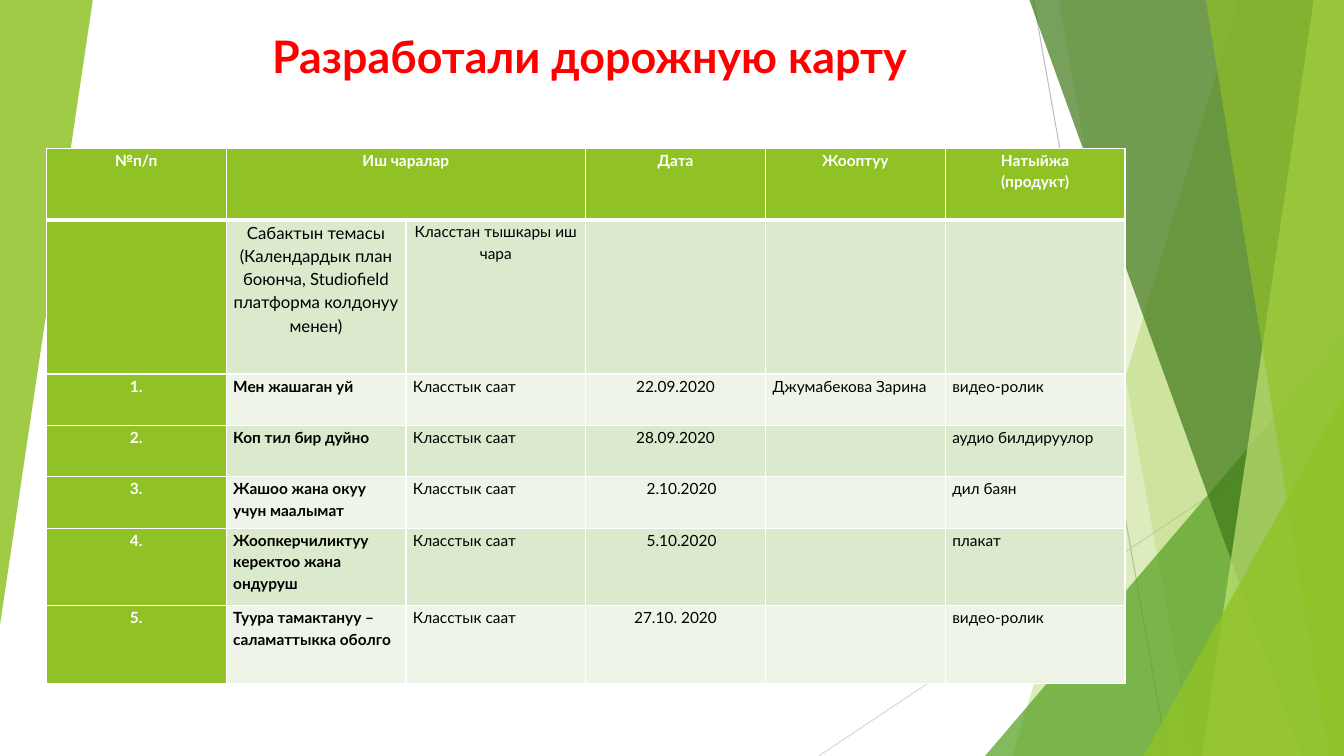
import pptx
import pptx.util
import pptx.dml.color
import pptx.enum.shapes
import pptx.enum.text
import pptx.oxml
import pptx.oxml.ns
import lxml.etree

Inches = pptx.util.Inches
Pt = pptx.util.Pt
RGBColor = pptx.dml.color.RGBColor
TRIANGLE = pptx.enum.shapes.MSO_SHAPE.ISOSCELES_TRIANGLE
STRAIGHT = pptx.enum.shapes.MSO_CONNECTOR.STRAIGHT
ANCHOR_BOTTOM = pptx.enum.text.MSO_ANCHOR.BOTTOM
CENTER = pptx.enum.text.PP_ALIGN.CENTER
LEFT = pptx.enum.text.PP_ALIGN.LEFT
qn = pptx.oxml.ns.qn

GREEN = RGBColor(0x90, 0xC2, 0x26)
MID_GREEN = RGBColor(0x54, 0xA0, 0x21)
DARK_GREEN = RGBColor(0x3F, 0x78, 0x19)
LIGHT_GREEN = RGBColor(0xC0, 0xE4, 0x74)
BAND_DARK = RGBColor(0xDB, 0xE9, 0xCD)
BAND_LIGHT = RGBColor(0xEE, 0xF4, 0xE8)
GRAY = RGBColor(0xBF, 0xBF, 0xBF)
LIGHT_GRAY = RGBColor(0xD9, 0xD9, 0xD9)
RED = RGBColor(0xFF, 0, 0)
WHITE = RGBColor(0xFF, 0xFF, 0xFF)
BLACK = RGBColor(0, 0, 0)
WIDTH, HEIGHT = 13.33, 7.5


def paint(shape, color, opacity):
    shape.shadow.inherit = False
    shape.line.fill.background()
    shape.fill.solid()
    shape.fill.fore_color.rgb = color
    color_element = shape.fill._xPr.find(".//" + qn("a:srgbClr"))
    lxml.etree.SubElement(color_element, qn("a:alpha"), val=str(opacity * 1000))


def write(paragraph, text, alignment, font_values):
    run = paragraph.add_run()
    run.text = text
    paragraph.alignment = alignment
    run.font.name = "Lato"
    run.font.color.rgb = font_values["color"]
    for name in ("size", "bold"):
        setattr(run.font, name, font_values[name])


presentation = pptx.Presentation()
presentation.slide_width = Inches(WIDTH)
presentation.slide_height = Inches(HEIGHT)
slide = presentation.slides.add_slide(presentation.slide_layouts[6])

# Thin background lines
for x1, y1, x2, y2, color in [
    (10.25, 0, 11.58, HEIGHT, GRAY),
    (WIDTH, 4.03, 8.12, HEIGHT, LIGHT_GRAY),
]:
    line = slide.shapes.add_connector(STRAIGHT, Inches(x1), Inches(y1), Inches(x2), Inches(y2))
    line.line.color.rgb = color
    line.line.width = Pt(0.75)
    lxml.etree.SubElement(line._element.spPr, qn("a:effectLst"))

# Translucent facets: ("band", top x, bottom x) reaches the right edge,
# ("triangle", left, top, width, height, rotation) has its apex on the right
facets = [
    (("band", 12.28, 10.04), GREEN, 30),
    (("band", 10.5, 11.83), GREEN, 20),
    (("triangle", 9.77, 3.33, 3.56, 4.17, 0), MID_GREEN, 72),
    (("band", 10.21, 12.91), DARK_GREEN, 70),
    (("band", 13.03, 11.92), LIGHT_GREEN, 70),
    (("band", 11.96, 13.18), GREEN, 65),
    (("triangle", 11.34, 3.93, 1.99, 3.57, 0), GREEN, 80),
    (("triangle", 0, 0, 0.92, 6.2, 180), GREEN, 85),
]
for (kind, *geometry), color, opacity in facets:
    if kind == "band":
        top_x, bottom_x = geometry
        builder = slide.shapes.build_freeform(Inches(top_x), 0)
        corners = [(WIDTH, 0), (WIDTH, HEIGHT), (bottom_x, HEIGHT)]
        builder.add_line_segments([(Inches(x), Inches(y)) for x, y in corners])
        facet = builder.convert_to_shape()
    else:
        *box, rotation = geometry
        facet = slide.shapes.add_shape(TRIANGLE, *[Inches(value) for value in box])
        facet.adjustments[0] = 1
        facet.rotation = rotation
    paint(facet, color, opacity)

# Title
title = slide.shapes.add_textbox(Inches(1.65), Inches(0.13), Inches(8.4), Inches(1.64))
frame_values = {"word_wrap": True, "vertical_anchor": ANCHOR_BOTTOM, "margin_bottom": Inches(0.95)}
for name, value in frame_values.items():
    setattr(title.text_frame, name, value)
write(title.text_frame.paragraphs[0], "Разработали дорожную карту", CENTER,
      {"size": Pt(32), "bold": True, "color": RED})

# Road map table
rows = [
    ["№п/п", "Иш чаралар", "", "Дата", "Жооптуу", "Натыйжа\n(продукт)"],
    ["", "Сабактын темасы\n(Календардык план боюнча, Studiofield платформа колдонуу менен)",
     "Класстан тышкары иш чара", "", "", ""],
    ["1.", "Мен жашаган уй", "Класстык саат", "22.09.2020", "Джумабекова Зарина", "видео-ролик"],
    ["2.", "Коп тил бир дуйно", "Класстык саат", "28.09.2020", "", "аудио билдируулор"],
    ["3.", "Жашоо жана окуу учун маалымат", "Класстык саат", "2.10.2020", "", "дил баян"],
    ["4.", "Жоопкерчиликтуу керектоо жана ондуруш", "Класстык саат", "5.10.2020", "", "плакат"],
    ["5.", "Туура тамактануу – саламаттыкка оболго", "Класстык саат", "27.10. 2020", "",
     "видео-ролик"],
]
row_heights = [0.71, 1.53, 0.51, 0.51, 0.51, 0.77, 0.77]
table = slide.shapes.add_table(len(rows), 6, Inches(0.46), Inches(1.47),
                               Inches(10.7), Inches(5.31)).table
for row, height in zip(table.rows, row_heights):
    row.height = Inches(height)
table.cell(0, 1).merge(table.cell(0, 2))

for row_index, texts in enumerate(rows):
    for column_index, text in enumerate(texts):
        cell = table.cell(row_index, column_index)
        solid = row_index == 0 or column_index == 0
        single_digit_day = column_index == 3 and text[1:2] == "."
        cell_values = {
            "margin_left": Inches(0.19 if single_digit_day else 0.07),
            "margin_right": Inches(0.07),
            "margin_top": 0,
            "margin_bottom": 0,
        }
        for name, value in cell_values.items():
            setattr(cell, name, value)

        # Fill and white borders, thicker under the header
        cell.fill.solid()
        cell.fill.fore_color.rgb = GREEN if solid else BAND_DARK if row_index % 2 else BAND_LIGHT
        properties = cell._tc.get_or_add_tcPr()
        for position, side in enumerate("LRTB"):
            header_edge = (row_index, side) in [(0, "B"), (1, "T")]
            border = pptx.oxml.parse_xml(
                f'<a:ln{side} xmlns:a="http://schemas.openxmlformats.org/drawingml/2006/main" '
                f'w="{Pt(3 if header_edge else 1)}"><a:solidFill><a:srgbClr val="{WHITE}"/>'
                f'</a:solidFill></a:ln{side}>')
            properties.insert(position, border)

        # Text
        centered = solid or row_index == 1 or column_index == 3
        font_values = {
            "size": Pt(12 if (row_index, column_index) == (1, 1) else 11),
            "bold": solid or (column_index == 1 and row_index > 1),
            "color": WHITE if solid else BLACK,
        }
        for line_index, line_text in enumerate(text.split("\n") if text else []):
            frame = cell.text_frame
            paragraph = frame.add_paragraph() if line_index else frame.paragraphs[0]
            paragraph.line_spacing = 1.15
            write(paragraph, line_text, CENTER if centered else LEFT, font_values)

presentation.save("out.pptx")
